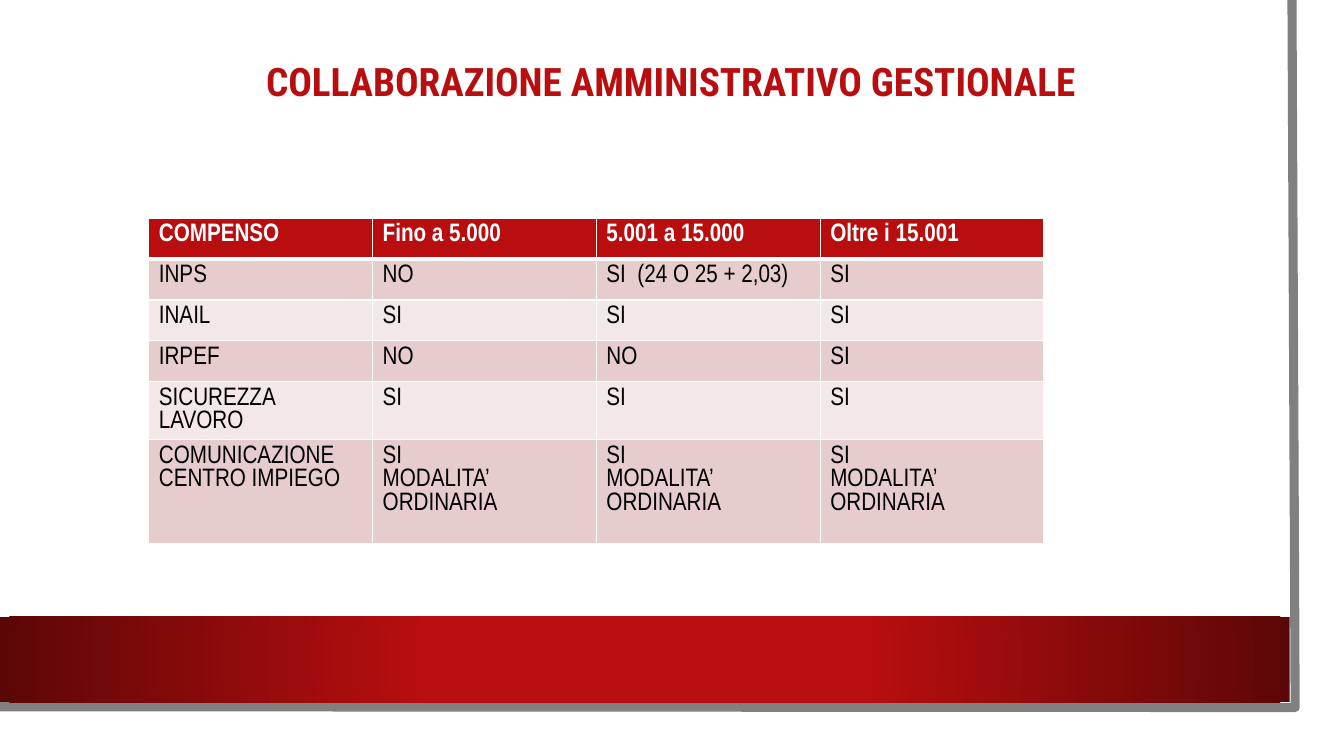
from dataclasses import dataclass

from lxml.etree import SubElement
from pptx import Presentation
from pptx.dml.color import RGBColor
from pptx.enum.shapes import MSO_SHAPE
from pptx.enum.text import MSO_ANCHOR, MSO_AUTO_SIZE, PP_ALIGN
from pptx.oxml.ns import qn
from pptx.slide import Slide
from pptx.table import _Cell
from pptx.util import Cm, Pt

COLOURS = {
    "red": "B80E0F",
    "dark red": "5C0707",
    "grey": "808080",
    "white": "FFFFFF",
    "black": "000000",
    "pink": "E6CCCC",
    "pale pink": "F3E7E7",
}
COLUMN_WIDTH = 5.64
ORDINARY = "SI\nMODALITA’ ORDINARIA"


@dataclass
class Row:
    height: float
    texts: tuple[str, ...]


ROWS = (
    Row(1.03, ("COMPENSO", "Fino a 5.000", "5.001 a 15.000", "Oltre i 15.001")),
    Row(1.03, ("INPS", "NO", "SI  (24 O 25 + 2,03)", "SI")),
    Row(1.03, ("INAIL", "SI", "SI", "SI")),
    Row(1.03, ("IRPEF", "NO", "NO", "SI")),
    Row(1.46, ("SICUREZZA LAVORO", "SI", "SI", "SI")),
    Row(2.63, ("COMUNICAZIONE\nCENTRO IMPIEGO", ORDINARY, ORDINARY, ORDINARY)),
)


def rgb(name: str) -> RGBColor:
    return RGBColor.from_string(COLOURS[name])


def add_sheet(slide: Slide) -> None:
    """Draw the white page with its grey edge on the right and bottom."""
    sheet = slide.shapes.add_shape(MSO_SHAPE.RECTANGLE, 0, 0, Cm(33.27), Cm(18.47))
    sheet.shadow.inherit = False
    sheet.fill.solid()
    sheet.fill.fore_color.rgb = rgb("white")
    sheet.line.fill.background()

    outline = slide.shapes.build_freeform(Cm(32.56), 0)
    outline.add_line_segments(
        [(Cm(32.64), Cm(17.83)), (Cm(-0.08), Cm(17.81))], close=False
    )
    edge = outline.convert_to_shape()
    edge.shadow.inherit = False
    edge.fill.background()
    edge.line.color.rgb = rgb("grey")
    edge.line.width = Pt(6.5)


def add_band(slide: Slide) -> None:
    """Draw the bottom band, red in the middle and darker outwards."""
    band = slide.shapes.add_shape(
        MSO_SHAPE.RECTANGLE, 0, Cm(15.54), Cm(32.5), Cm(2.16)
    )
    band.shadow.inherit = False
    band.line.fill.background()
    band.fill.gradient()
    for stop, position, colour in zip(
        band.fill.gradient_stops, (0.34, 1), ("red", "dark red")
    ):
        stop.position = position
        stop.color.rgb = rgb(colour)
    gradient = band._element.spPr.find(qn("a:gradFill"))
    gradient.remove(gradient.find(qn("a:lin")))
    circle = SubElement(gradient, qn("a:path"), {"path": "circle"})
    SubElement(circle, qn("a:fillToRect"), dict.fromkeys("ltrb", "50000"))


def format_title(slide: Slide) -> None:
    title = slide.shapes.title
    slide.shapes._spTree.append(title._element)
    title.left, title.top = Cm(6.45), Cm(1.63)
    title.width, title.height = Cm(29.95), Cm(0.97)
    frame = title.text_frame
    frame.auto_size = MSO_AUTO_SIZE.NONE
    frame.vertical_anchor = MSO_ANCHOR.MIDDLE
    paragraph = frame.paragraphs[0]
    paragraph.alignment = PP_ALIGN.LEFT
    paragraph.line_spacing = 0.9
    run = paragraph.add_run()
    run.text = "COLLABORAZIONE AMMINISTRATIVO GESTIONALE"
    run.font.name = "Roboto Condensed"
    run.font.size = Pt(28)
    run.font.bold = True
    run.font.color.rgb = rgb("red")


def add_borders(cell: _Cell, top: float, bottom: float) -> None:
    properties = cell._tc.get_or_add_tcPr()
    for side, width in (("L", 1), ("R", 1), ("T", top), ("B", bottom)):
        line = SubElement(properties, qn(f"a:ln{side}"), {"w": str(Pt(width))})
        fill = SubElement(line, qn("a:solidFill"))
        SubElement(fill, qn("a:srgbClr"), {"val": COLOURS["white"]})


def fill_cell(cell: _Cell, text: str, row_number: int) -> None:
    is_header = row_number == 0
    add_borders(cell, 3 if row_number == 1 else 1, 3 if is_header else 1)
    background = "red" if is_header else ("pale pink", "pink")[row_number % 2]
    cell.fill.solid()
    cell.fill.fore_color.rgb = rgb(background)
    frame = cell.text_frame
    for number, line in enumerate(text.split("\n")):
        paragraph = frame.add_paragraph() if number else frame.paragraphs[0]
        run = paragraph.add_run()
        run.text = line
        run.font.name = "Arial Narrow"
        run.font.size = Pt(18)
        run.font.bold = is_header
        run.font.color.rgb = rgb("white" if is_header else "black")


def add_fee_table(slide: Slide) -> None:
    column_count = len(ROWS[0].texts)
    table = slide.shapes.add_table(
        len(ROWS),
        column_count,
        Cm(3.75),
        Cm(5.5),
        Cm(COLUMN_WIDTH * column_count),
        Cm(sum(row.height for row in ROWS)),
    ).table
    for column in table.columns:
        column.width = Cm(COLUMN_WIDTH)
    for row_number, row in enumerate(ROWS):
        table.rows[row_number].height = Cm(row.height)
        for column_number, text in enumerate(row.texts):
            fill_cell(table.cell(row_number, column_number), text, row_number)


def main() -> None:
    presentation = Presentation()
    presentation.slide_width, presentation.slide_height = Cm(33.87), Cm(19.05)
    slide = presentation.slides.add_slide(presentation.slide_layouts[5])
    add_sheet(slide)
    add_band(slide)
    format_title(slide)
    add_fee_table(slide)
    presentation.save("out.pptx")


if __name__ == "__main__":
    main()
